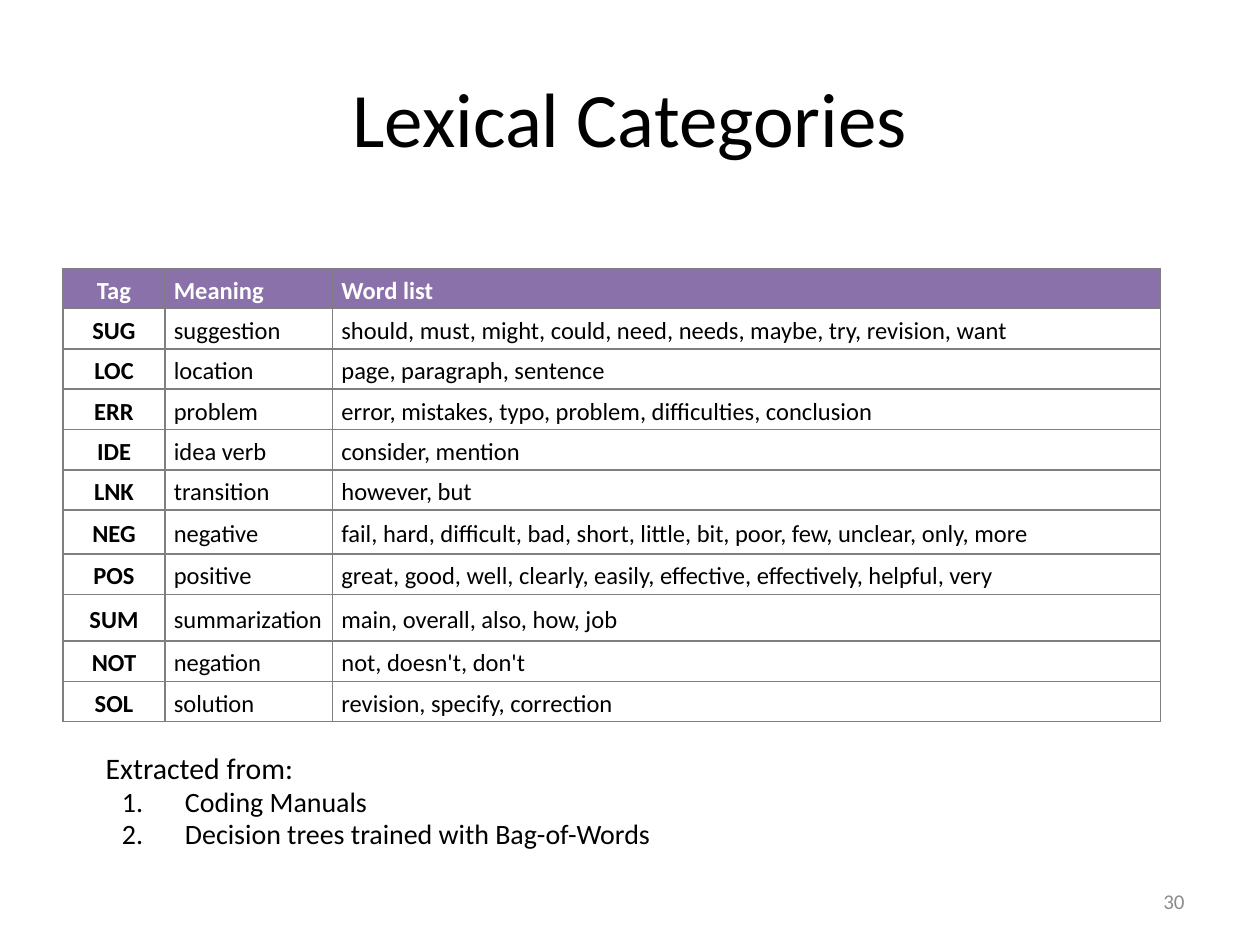
from dataclasses import dataclass
from typing import Any

from lxml import etree
from pptx import Presentation, util as u
from pptx.dml.color import RGBColor
from pptx.enum import text
from pptx.oxml import ns

BLACK = RGBColor(0x00, 0x00, 0x00)
WHITE = RGBColor(0xFF, 0xFF, 0xFF)
GREY = RGBColor(0x8C, 0x8C, 0x8C)
RULE = RGBColor(0x7F, 0x7F, 0x7F)
PURPLE = RGBColor(0x8B, 0x71, 0xA9)
LEFT, MID, RIGHT = text.PP_ALIGN.LEFT, text.PP_ALIGN.CENTER, text.PP_ALIGN.RIGHT
CENTRE = text.MSO_ANCHOR.MIDDLE
TOP = text.MSO_ANCHOR.TOP

ROWS = [
    ("Tag", "Meaning", "Word list"),
    ("SUG", "suggestion", "should, must, might, could, need, needs, maybe, try, revision, want"),
    ("LOC", "location", "page, paragraph, sentence"),
    ("ERR", "problem", "error, mistakes, typo, problem, difficulties, conclusion"),
    ("IDE", "idea verb", "consider, mention"),
    ("LNK", "transition", "however, but"),
    ("NEG", "negative", "fail, hard, difficult, bad, short, little, bit, poor, few, unclear, only, more"),
    ("POS", "positive", "great, good, well, clearly, easily, effective, effectively, helpful, very"),
    ("SUM", "summarization", "main, overall, also, how, job"),
    ("NOT", "negation", "not, doesn't, don't"),
    ("SOL", "solution", "revision, specify, correction"),
]
WIDTHS = (0.81, 1.33, 6.57)
HEIGHT = 0.32
TALL = {"NEG": 0.35, "SUM": 0.37}


@dataclass
class Line:
    words: str
    size: float
    color: RGBColor = BLACK
    bold: bool = False
    align: Any = LEFT
    space: float = 1.0
    before: float = 0
    indent: tuple[float, float] = (0, 0)
    number: bool = False


@dataclass
class Box:
    left: float
    top: float
    width: float
    height: float
    anchor: Any
    lines: list[Line]


def apply(item: Any, style: dict[str, Any]) -> None:
    for key, value in style.items():
        setattr(item, key, value)


def write(para: Any, line: Line) -> None:
    run = para.add_run()
    run.text = line.words
    apply(run.font, {"name": "Calibri", "size": u.Pt(line.size), "bold": line.bold})
    run.font.color.rgb = line.color
    apply(para, {"alignment": line.align, "line_spacing": line.space,
                 "space_before": u.Pt(line.before)})
    props = para._p.get_or_add_pPr()
    margin, hang = line.indent
    props.set("marL", str(u.Inches(margin)))
    props.set("indent", str(u.Inches(hang)))
    if line.number:
        etree.SubElement(props, ns.qn("a:buFont"), typeface="+mj-lt")
        etree.SubElement(props, ns.qn("a:buAutoNum"), type="arabicPeriod")


def draw_box(slide: Any, box: Box) -> None:
    area = map(u.Inches, (box.left, box.top, box.width, box.height))
    frame = slide.shapes.add_textbox(*area).text_frame
    apply(frame, {"word_wrap": True, "vertical_anchor": box.anchor})
    for i, line in enumerate(box.lines):
        write(frame.add_paragraph() if i else frame.paragraphs[0], line)


def edge(cell: Any) -> None:
    props = cell._tc.get_or_add_tcPr()
    for i, side in enumerate(("lnL", "lnR", "lnT", "lnB")):
        rule = etree.Element(ns.qn(f"a:{side}"), w=str(u.Pt(1)))
        fill = etree.SubElement(rule, ns.qn("a:solidFill"))
        etree.SubElement(fill, ns.qn("a:srgbClr"), val=str(RULE))
        props.insert(i, rule)


def draw_table(slide: Any) -> None:
    tall = [TALL.get(row[0], HEIGHT) for row in ROWS]
    area = map(u.Inches, (0.5, 2.13, sum(WIDTHS), sum(tall)))
    table = slide.shapes.add_table(len(ROWS), len(WIDTHS), *area).table
    apply(table, {"first_row": False, "horz_banding": False})
    for col, width in zip(table.columns, WIDTHS):
        col.width = u.Inches(width)
    for r, row in enumerate(ROWS):
        table.rows[r].height = u.Inches(tall[r])
        for c, words in enumerate(row):
            cell = table.cell(r, c)
            apply(cell, {"vertical_anchor": CENTRE, "margin_top": 0, "margin_bottom": 0,
                         "margin_left": u.Inches(0.07), "margin_right": u.Inches(0.07)})
            cell.fill.solid()
            cell.fill.fore_color.rgb = WHITE if r else PURPLE
            edge(cell)
            write(cell.text_frame.paragraphs[0],
                  Line(words, 14, BLACK if r else WHITE, r == 0 or c == 0,
                       LEFT if c else MID, 1.15))


def main() -> None:
    deck = Presentation()
    apply(deck, {"slide_width": u.Inches(10), "slide_height": u.Inches(7.5)})
    slide = deck.slides.add_slide(deck.slide_layouts[6])
    steps = [Line(words, 16, space=0.8, before=3, indent=(1.13, -0.5), number=True)
             for words in ("Coding Manuals", "Decision trees trained with Bag-of-Words")]
    notes = [Line("Extracted from:", 17, space=0.8, indent=(0.5, 0)), *steps]
    for box in (
        Box(0.5, 0.3, 9, 1.25, CENTRE, [Line("Lexical Categories", 44, align=MID)]),
        Box(0.24, 5.96, 9.53, 1, TOP, notes),
        Box(7.17, 6.95, 2.33, 0.4, CENTRE, [Line("30", 12, GREY, align=RIGHT)]),
    ):
        draw_box(slide, box)
    draw_table(slide)
    deck.save("out.pptx")


if __name__ == "__main__":
    main()
